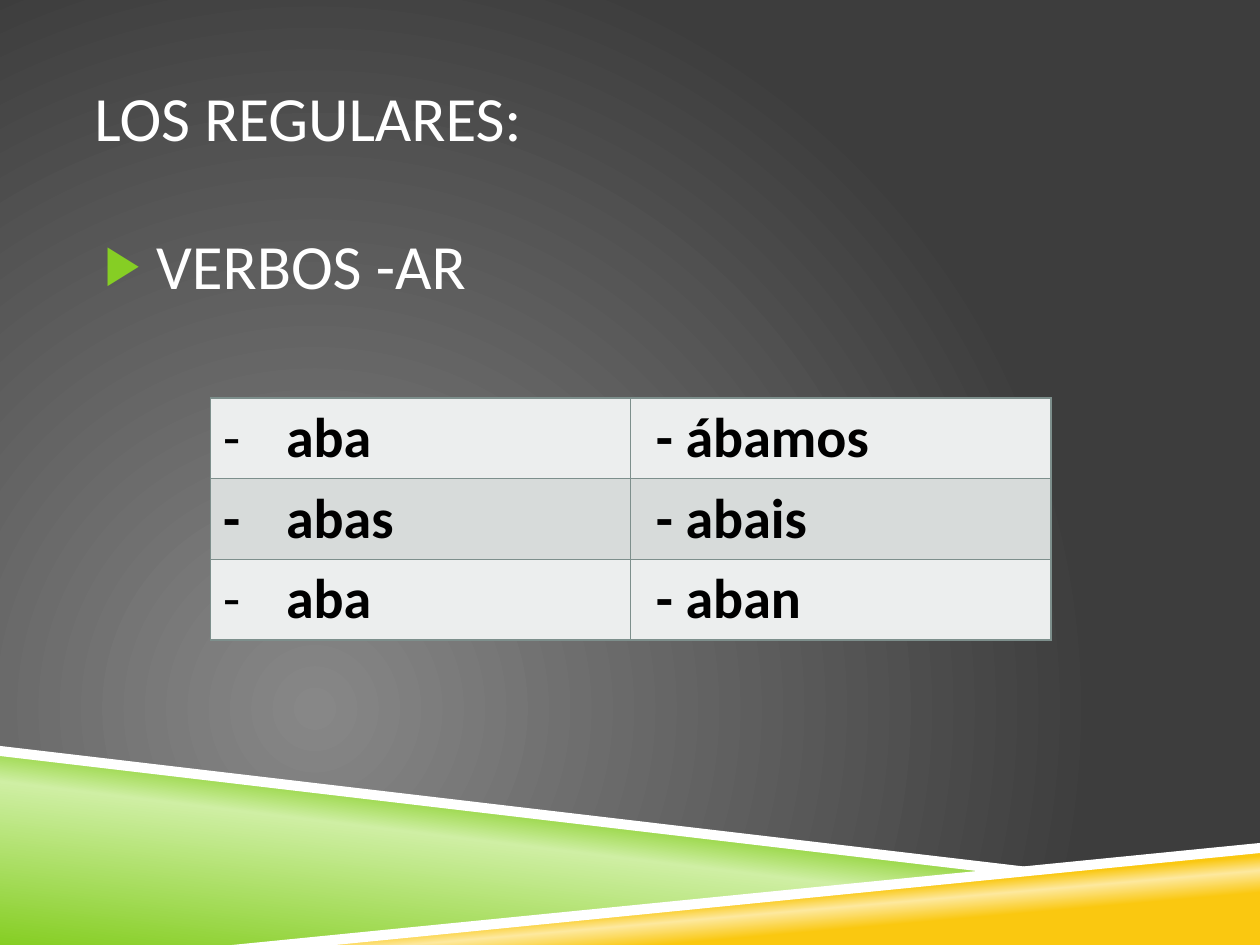
from dataclasses import dataclass

from lxml import etree
from pptx import Presentation
from pptx import util as u
from pptx.dml.color import RGBColor
from pptx.enum import text
from pptx.oxml.ns import qn


@dataclass(frozen=True)
class Theme:
    """Colours, font and type sizes."""
    font: str = "Calibri"
    heading_size: int = 36
    ending_size: int = 32
    white: str = "FFFFFF"
    black: str = "000000"
    green: str = "86CE24"
    pale_green: str = "CFEFA4"
    amber: str = "FAC810"
    pale_amber: str = "FDE99F"
    glow: str = "878787"
    charcoal: str = "3D3D3D"
    border: str = "7D8F8C"
    bands: tuple = ("ECEEEE", "D7DBDA")


def add_xml(parent, tag, **attributes):
    """Append a DrawingML element to its parent."""
    return etree.SubElement(parent, qn(f"a:{tag}"), attributes)


class SlideBuilder:
    """Hold the theme and the current slide."""

    def __init__(self, deck, theme):
        self.theme = theme
        self.slide = deck.slides.add_slide(deck.slide_layouts[6])

    def gradient(self, fill, owner, stops, angle=None):
        """Fill with a linear gradient, or a circular one without angle."""
        fill.gradient()
        grad = owner.find(".//" + qn("a:gradFill"))
        for child in list(grad):
            grad.remove(child)
        stop_list = add_xml(grad, "gsLst")
        for position, color in stops:
            stop = add_xml(stop_list, "gs", pos=str(position * 1000))
            add_xml(stop, "srgbClr", val=color)
        if angle is None:
            circle = add_xml(grad, "path", path="circle")
            add_xml(circle, "fillToRect", l="50000", t="100000", r="100000", b="50000")
        else:
            add_xml(grad, "lin", ang=str(angle * 60000), scaled="0")

    def background(self, stops):
        """Paint the slide background."""
        self.gradient(self.slide.background.fill, self.slide.element, stops)

    def band(self, points, color=None, stops=None, angle=None):
        """Draw a closed polygon in a plain colour or a gradient."""
        corners = [(u.Inches(x), u.Inches(y)) for x, y in points]
        outline = self.slide.shapes.build_freeform(*corners[0])
        outline.add_line_segments(corners[1:], close=True)
        band = outline.convert_to_shape()
        band.shadow.inherit = False
        band.line.fill.background()
        if stops:
            self.gradient(band.fill, band.element.spPr, stops, angle)
        else:
            band.fill.solid()
            band.fill.fore_color.rgb = RGBColor.from_string(color)

    def indent(self, paragraph, margin, hanging=0):
        """Set the left margin and first-line indent; return the properties."""
        properties = paragraph._p.get_or_add_pPr()
        properties.set("marL", str(u.Inches(margin)))
        properties.set("indent", str(u.Inches(-hanging)))
        return properties

    def bullet(self, paragraph, mark, margin, hanging, color=None, size=100):
        """Give a paragraph a hanging bullet."""
        properties = self.indent(paragraph, margin, hanging)
        if color:
            add_xml(add_xml(properties, "buClr"), "srgbClr", val=color)
        add_xml(properties, "buSzPct", val=str(size * 1000))
        add_xml(properties, "buFont", typeface=self.theme.font)
        add_xml(properties, "buChar", char=mark)

    def run(self, paragraph, words, size, color, bold=False):
        """Add one styled run."""
        run = paragraph.add_run()
        run.text = words
        run.font.name = self.theme.font
        run.font.size = u.Pt(size)
        run.font.bold = bold
        run.font.color.rgb = RGBColor.from_string(color)

    def heading(self, words, top, height, anchor, mark=None):
        """Add a heading box, with a bullet if a mark is given."""
        box = self.slide.shapes.add_textbox(
            u.Inches(0.75), u.Inches(top), u.Inches(8.5), u.Inches(height))
        frame = box.text_frame
        frame.word_wrap = True
        frame.vertical_anchor = anchor
        frame.margin_left = frame.margin_right = 0
        paragraph = frame.paragraphs[0]
        if mark:
            self.bullet(paragraph, mark, 0.49, 0.41, self.theme.green, 85)
        self.run(paragraph, words, self.theme.heading_size, self.theme.white)

    def cell_style(self, cell, color):
        """Set the borders and fill of a cell."""
        properties = cell._tc.get_or_add_tcPr()
        for side in ("lnL", "lnR", "lnT", "lnB"):
            line = add_xml(properties, side, w=str(u.Pt(1)))
            add_xml(add_xml(line, "solidFill"), "srgbClr", val=self.theme.border)
        cell.fill.solid()
        cell.fill.fore_color.rgb = RGBColor.from_string(color)

    def endings(self, rows):
        """Add the table of singular and plural endings."""
        theme = self.theme
        table = self.slide.shapes.add_table(
            len(rows), 2, u.Inches(1.67), u.Inches(3.16),
            u.Inches(6.67), u.Inches(0.64 * len(rows))).table
        for index, (dash, dash_bold, singular, plural) in enumerate(rows):
            left, right = table.rows[index].cells
            for cell in (left, right):
                self.cell_style(cell, theme.bands[index % 2])
            paragraph = left.text_frame.paragraphs[0]
            if dash == "bullet":
                self.bullet(paragraph, "-", 0.5, 0.5)
            else:
                tabs = add_xml(self.indent(paragraph, 0), "tabLst")
                add_xml(tabs, "tab", pos=str(u.Inches(0.44)), algn="l")
                self.run(paragraph, "-\t", theme.ending_size, theme.black, dash_bold)
            self.run(paragraph, singular, theme.ending_size, theme.black, True)
            paragraph = right.text_frame.paragraphs[0]
            self.indent(paragraph, 0.1)
            self.run(paragraph, f"- {plural}", theme.ending_size, theme.black, True)


def main():
    """Build the slide on regular -ar verbs."""
    deck = Presentation()
    deck.slide_width, deck.slide_height = u.Inches(10), u.Inches(7.5)
    theme = Theme()
    page = SlideBuilder(deck, theme)
    page.background([(0, theme.glow), (100, theme.charcoal)])
    page.band([(0, 5.97), (7.92, 6.92), (2, 7.5), (0, 7.5)], angle=277,
              stops=[(0, theme.green), (52, theme.pale_green), (66, theme.green)])
    page.band([(1.98, 7.5), (10, 6.72), (10, 7.5)], angle=265,
              stops=[(28, theme.amber), (40, theme.pale_amber), (48, theme.amber)])
    page.band([(0, 5.92), (0, 6), (7.9, 6.93), (8.32, 6.9)], theme.white)
    page.band([(10, 6.69), (1.84, 7.5), (2.66, 7.5), (10, 6.77)], theme.white)
    page.heading("LOS REGULARES:", 0.3, 1.25, text.MSO_ANCHOR.MIDDLE)
    page.heading("VERBOS -AR", 1.75, 4.08, text.MSO_ANCHOR.TOP, "▶")
    page.endings([
        ("bullet", False, "aba", "ábamos"),
        ("typed", True, "abas", "abais"),
        ("typed", False, "aba", "aban"),
    ])
    deck.save("out.pptx")


if __name__ == "__main__":
    main()
